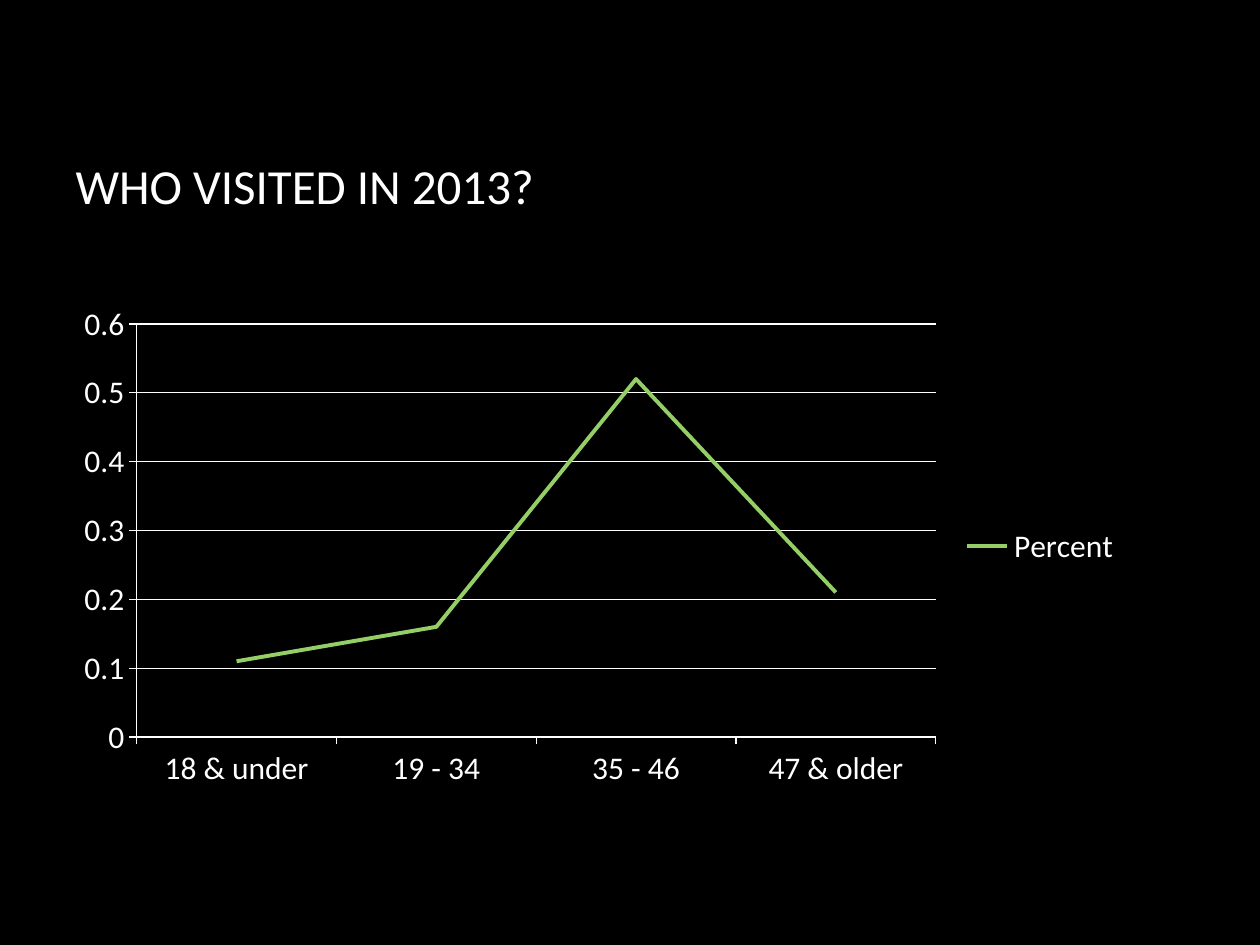
from typing import NamedTuple

from pptx import Presentation
from pptx.chart.data import CategoryChartData
from pptx.dml.color import RGBColor
from pptx.enum.chart import XL_CHART_TYPE, XL_LEGEND_POSITION, XL_MARKER_STYLE, XL_TICK_MARK
from pptx.enum.text import MSO_ANCHOR, PP_ALIGN
from pptx.util import Inches, Pt

FONT = "Calibri"
BLACK, WHITE, GREEN = "000000", "FFFFFF", "94CE67"


class AgeGroup(NamedTuple):
    label: str
    share: float


AGE_GROUPS = [
    AgeGroup("18 & under", 0.11),
    AgeGroup("19 - 34", 0.16),
    AgeGroup("35 - 46", 0.52),
    AgeGroup("47 & older", 0.21),
]


def color(value: str) -> RGBColor:
    return RGBColor.from_string(value)


def format_font(font, *, size: float, fill: str = WHITE) -> None:
    font.name = FONT
    font.size = Pt(size)
    font.bold = False
    font.color.rgb = color(fill)


def format_line(line, *, width: float, fill: str = WHITE) -> None:
    line.color.rgb = color(fill)
    line.width = Pt(width)


def add_title(page, text: str) -> None:
    title = page.shapes.title
    title.left, title.top = Inches(0.5), Inches(0.67)
    title.width, title.height = Inches(8.5), Inches(1.59)
    frame = title.text_frame
    frame.word_wrap = True
    frame.vertical_anchor = MSO_ANCHOR.MIDDLE
    para = frame.paragraphs[0]
    para.alignment = PP_ALIGN.LEFT
    span = para.add_run()
    span.text = text
    format_font(span.font, size=28)


def add_visitor_chart(page, groups: list[AgeGroup]) -> None:
    data = CategoryChartData()
    data.categories = [group.label for group in groups]
    data.add_series("Percent", [group.share for group in groups])
    chart = page.shapes.add_chart(
        XL_CHART_TYPE.LINE, Inches(0.5), Inches(2.34), Inches(8.5), Inches(3.99), data
    ).chart
    format_font(chart.font, size=18)
    chart.has_title = False
    chart.has_legend = True
    chart.legend.position = XL_LEGEND_POSITION.RIGHT
    chart.legend.include_in_layout = False

    for axis in (chart.category_axis, chart.value_axis):
        axis.major_tick_mark = XL_TICK_MARK.OUTSIDE
        axis.minor_tick_mark = XL_TICK_MARK.NONE
        format_line(axis.format.line, width=0.75)
    values = chart.value_axis
    values.minimum_scale, values.maximum_scale, values.major_unit = 0, 0.6, 0.1
    values.has_major_gridlines = True
    format_line(values.major_gridlines.format.line, width=0.75)

    plot = chart.plots[0]
    plot.vary_by_categories = False
    series = plot.series[0]
    series.smooth = False
    series.marker.style = XL_MARKER_STYLE.NONE
    format_line(series.format.line, width=2.25, fill=GREEN)


def main() -> None:
    deck = Presentation()
    deck.slide_width, deck.slide_height = Inches(10), Inches(7.5)
    page = deck.slides.add_slide(deck.slide_layouts.get_by_name("Title Only"))
    page.background.fill.solid()
    page.background.fill.fore_color.rgb = color(BLACK)
    add_title(page, "WHO VISITED IN 2013?")
    add_visitor_chart(page, AGE_GROUPS)
    deck.save("out.pptx")


if __name__ == "__main__":
    main()
